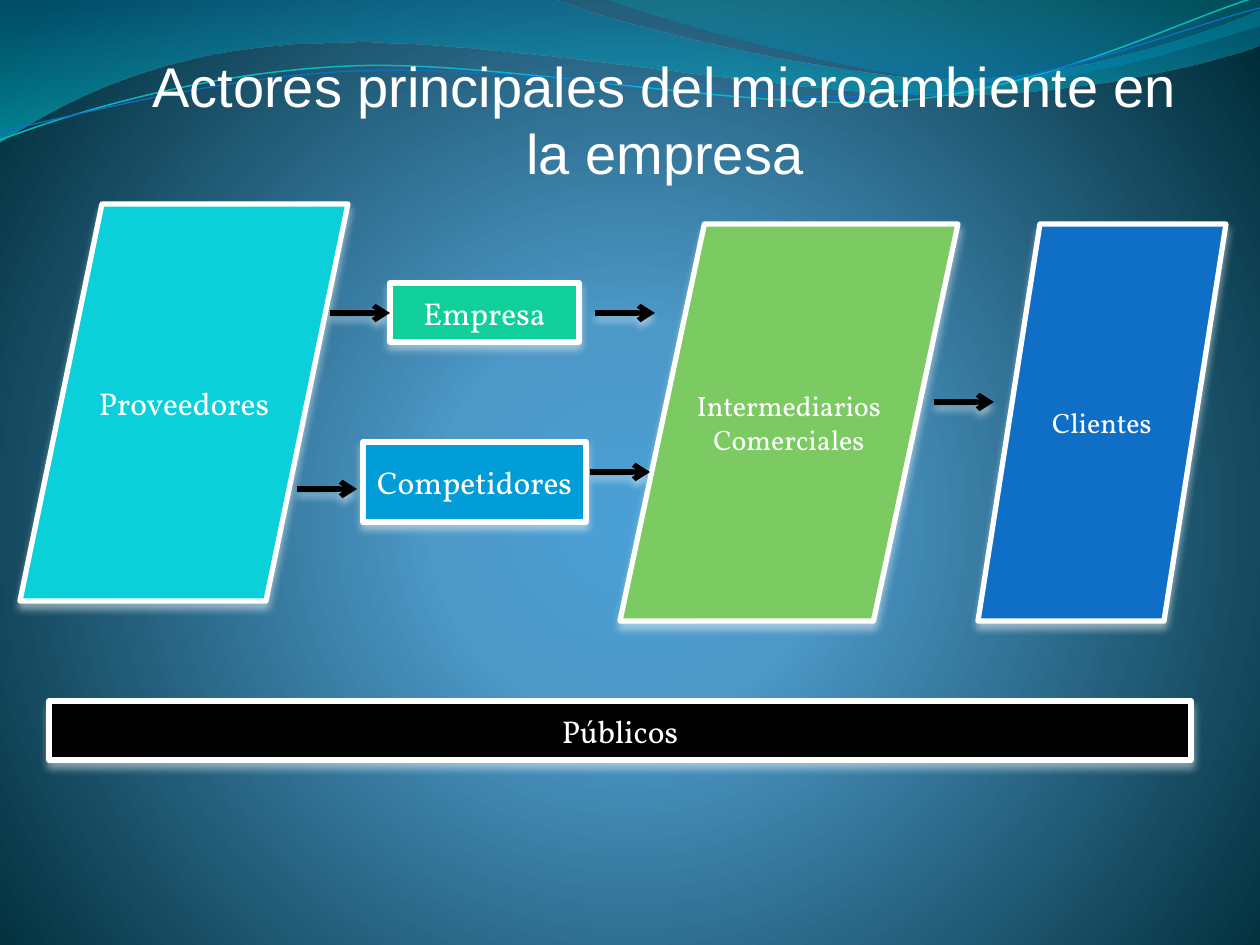
from lxml import etree
from pptx import Presentation
from pptx.dml.color import RGBColor
from pptx.enum.shapes import MSO_CONNECTOR, MSO_SHAPE
from pptx.enum.text import MSO_ANCHOR, PP_ALIGN
from pptx.oxml.ns import qn
from pptx.util import Pt

EMU_PER_PX = 914400 / 126
RECT = MSO_SHAPE.RECTANGLE
SLANTED = MSO_SHAPE.PARALLELOGRAM
STRAIGHT = MSO_CONNECTOR.STRAIGHT
CENTER = PP_ALIGN.CENTER
MIDDLE = MSO_ANCHOR.MIDDLE
WHITE, BLACK = "FFFFFF", "000000"
ARROW_LENGTH = 60

# Each wave: start point, then curves (three points) or straight lines (one point)
BANDS = [
    ((0, 0), [
        [(554, -1)],
        [(600, 21), (837, 79), (955, 79)],
        [(1075, 79), (1207, 33), (1260, 11)],
        [(1261, 45)],
        [(1239, 55), (1096, 96), (940, 95)],
        [(784, 95), (481, 35), (324, 43)],
        [(163, 45), (58, 105), (-1, 142)],
    ], [(0, "0074A1", 45), (100, "00C6CF", 55)]),
    ((604, -1), [
        [(641, 14), (859, 78), (969, 82)],
        [(1079, 87), (1211, 40), (1260, 26)],
        [(1260, 0)],
    ], [(0, "00A1A9", 30), (80, "008BBF", 45)]),
]
STRANDS = [
    ((0, 140), [
        [(60, 117), (199, 72), (349, 66)],
        [(498, 59), (747, 112), (898, 101)],
        [(1050, 89), (1182, 19), (1257, -3)],
    ], "0AB8BF", 0.85),
    ((0, 131), [
        [(59, 121), (207, 77), (357, 71)],
        [(508, 64), (752, 106), (903, 95)],
        [(1053, 84), (1186, 26), (1260, 8)],
    ], "0F6FC6", 0.75),
]
# Actor: text, preset, box, fill, text size
ACTORS = [
    ("Proveedores", SLANTED, (20, 204, 328, 397), "0BD0D9", 18),
    ("Empresa", RECT, (390, 283, 189, 59), "10CF9B", 18),
    ("Competidores", RECT, (363, 442, 223, 80), "009DD9", 18),
    ("Intermediarios\nComerciales", SLANTED, (620, 224, 338, 397), "7CCA62", 16),
    ("Clientes", SLANTED, (978, 224, 248, 397), "0F6FC6", 16),
    ("Públicos", RECT, (49, 701, 1142, 59), BLACK, 18),
]
ARROW_STARTS = [(330, 313), (297, 489), (595, 313), (590, 472), (934, 402)]


def px(*lengths):
    return [round(length * EMU_PER_PX) for length in lengths]


def rgb(color):
    return RGBColor.from_string(color)


def set_attributes(target, values):
    for name, value in values.items():
        setattr(target, name, value)


def set_line(line, color, width):
    line.color.rgb = rgb(color)
    line.width = Pt(width)


def set_gradient(fill, parent, stops, direction, **settings):
    """Put a gradient where the solid fill of parent stands."""
    fill.solid()
    solid = parent.find(qn("a:solidFill"))
    gradient = etree.Element(qn("a:gradFill"), rotWithShape="1")
    stop_list = etree.SubElement(gradient, qn("a:gsLst"))
    for position, color, alpha in stops:
        stop = etree.SubElement(stop_list, qn("a:gs"), pos=str(position * 1000))
        tone = etree.SubElement(stop, qn("a:srgbClr"), val=color)
        etree.SubElement(tone, qn("a:alpha"), val=str(alpha * 1000))
    shade = etree.SubElement(gradient, qn(f"a:{direction}"), **settings)
    parent.replace(solid, gradient)
    return shade


def add_shadow(properties):
    effects = etree.SubElement(properties, qn("a:effectLst"))
    shadow = etree.SubElement(effects, qn("a:outerShdw"), blurRad="57150", dist="38100",
                              dir="5400000", algn="ctr", rotWithShape="0")
    tone = etree.SubElement(shadow, qn("a:srgbClr"), val=WHITE)
    etree.SubElement(tone, qn("a:alpha"), val="48000")


def write_text(frame, text, font, size):
    frame.word_wrap = True
    frame.text = text
    for paragraph in frame.paragraphs:
        paragraph.alignment = CENTER
        set_attributes(paragraph.font, {"name": font, "size": Pt(size)})
        paragraph.font.color.rgb = rgb(WHITE)


def bend(outline, segments):
    """Merge the three lines of each curved segment into one Bézier curve."""
    lines = iter(outline.findall(qn("a:lnTo")))
    for segment in segments:
        parts = [next(lines) for _ in segment]
        if len(parts) == 3:
            curve = etree.Element(qn("a:cubicBezTo"))
            parts[0].addprevious(curve)
            for part in parts:
                curve.append(part[0])
                outline.remove(part)


def add_wave(slide, start, segments, closed):
    points = [point for segment in segments for point in segment]
    builder = slide.shapes.build_freeform(*start, scale=EMU_PER_PX)
    builder.add_line_segments(points, close=closed)
    wave = builder.convert_to_shape()
    wave.shadow.inherit = False
    bend(wave.element.find(".//" + qn("a:path")), segments)
    return wave


def add_band(slide, start, segments, stops):
    band = add_wave(slide, start, segments, True)
    band.line.fill.background()
    set_gradient(band.fill, band.element.spPr, stops, "lin", ang="5400000", scaled="0")


def add_strand(slide, start, segments, color, width):
    strand = add_wave(slide, start, segments, False)
    strand.fill.background()
    set_line(strand.line, color, width)


def add_actor(slide, text, preset, box, color, size):
    actor = slide.shapes.add_shape(preset, *px(*box))
    actor.fill.solid()
    actor.fill.fore_color.rgb = rgb(color)
    set_line(actor.line, WHITE, 3)
    add_shadow(actor.element.spPr)
    actor.text_frame.vertical_anchor = MIDDLE
    write_text(actor.text_frame, text, "Vollkorn", size)


def add_arrow(slide, x, y):
    arrow = slide.shapes.add_connector(STRAIGHT, *px(x, y, x + ARROW_LENGTH, y))
    set_line(arrow.line, BLACK, 3)
    properties = arrow.element.spPr
    etree.SubElement(properties.find(qn("a:ln")), qn("a:tailEnd"), type="arrow")
    add_shadow(properties)


def add_title(slide):
    title = slide.shapes.add_textbox(*px(134, 45, 1062, 149))
    write_text(title.text_frame, "Actores principales del microambiente en la empresa",
               "Arial", 32)


def paint_background(slide):
    fill = slide.background.fill
    fill.solid()
    properties = slide.element.find(".//" + qn("p:bgPr"))
    stops = [(0, "4AA0D6", 100), (25, "4C98C7", 100), (100, "002C38", 100)]
    shade = set_gradient(fill, properties, stops, "path", path="circle")
    etree.SubElement(shade, qn("a:fillToRect"), l="10000", t="110000", r="10000", b="100000")


def main():
    deck = Presentation()
    deck.slide_width, deck.slide_height = px(1260, 945)
    slide = deck.slides.add_slide(deck.slide_layouts[6])

    # Backdrop with waves
    paint_background(slide)
    for band in BANDS:
        add_band(slide, *band)
    for strand in STRANDS:
        add_strand(slide, *strand)

    # Actors and the flow between them
    for actor in ACTORS:
        add_actor(slide, *actor)
    for start in ARROW_STARTS:
        add_arrow(slide, *start)
    add_title(slide)

    deck.save("out.pptx")


if __name__ == "__main__":
    main()
